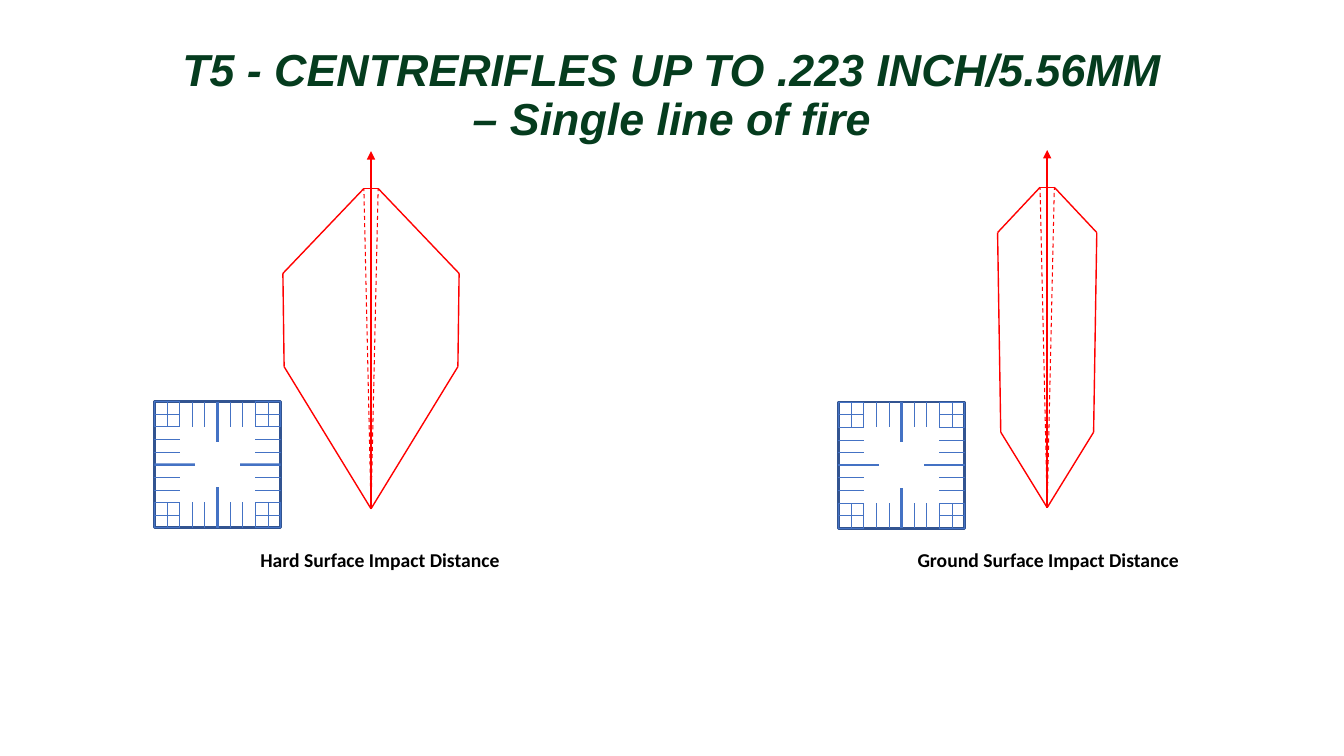
from pptx import Presentation
from pptx.dml.color import RGBColor
from pptx.enum import dml, shapes, text
from pptx.oxml import ns
from pptx.util import Cm, Pt
from lxml import etree

GREEN = RGBColor(0x05, 0x3C, 0x1E)
BLACK = RGBColor(0, 0, 0)
RED = RGBColor(0xFF, 0, 0)
BLUE = RGBColor(0x44, 0x72, 0xC4)
NAVY = RGBColor(0x32, 0x54, 0x91)

TITLE = ["T5 - CENTRERIFLES UP TO .223 INCH/5.56MM", "– Single line of fire"]

# All lengths in cm; profile lists (half width, y) from the foot up to the tip.
DIAGRAMS = [
    {"caption": "Ground Surface Impact Distance", "caption_left": 21.62,
     "grid": (21.13, 10.13), "axis": 26.39, "arrow_top": 3.78,
     "profile": [(0, 12.79), (1.17, 10.89), (1.25, 5.86), (0.18, 4.72)]},
    {"caption": "Hard Surface Impact Distance", "caption_left": 4.78,
     "grid": (3.89, 10.12), "axis": 9.35, "arrow_top": 3.81,
     "profile": [(0, 12.82), (2.19, 9.24), (2.22, 6.89), (0.18, 4.75)]},
]

GRID_SIDE, GRID_CELLS = 3.18, 10
SHORT_TICK, LONG_TICK = 0.64, 1.02
# Inward direction of the ticks on each side: top, left, bottom, right
INWARD = [(0, 1), (1, 0), (0, -1), (-1, 0)]


def add_line(group, start, end, color, width, dashed=False, arrow=False):
    line = group.shapes.add_connector(
        shapes.MSO_CONNECTOR.STRAIGHT, *map(Cm, start + end))
    line.line.color.rgb = color
    line.line.width = Pt(width)
    if dashed:
        line.line.dash_style = dml.MSO_LINE.DASH
    if arrow:
        etree.SubElement(line.line._get_or_add_ln(), ns.qn("a:tailEnd"),
                         type="triangle")
    etree.SubElement(line._element.spPr, ns.qn("a:effectLst"))
    return line


def add_grid(group, left, top):
    """Draw a square with ruler ticks pointing in from all four sides."""
    frame = group.shapes.add_shape(
        shapes.MSO_SHAPE.RECTANGLE, *map(Cm, (left, top, GRID_SIDE, GRID_SIDE)))
    frame.shadow.inherit = False
    frame.fill.background()
    frame.line.color.rgb = NAVY
    frame.line.width = Pt(2)

    for side, (dx, dy) in enumerate(INWARD):
        for i in range(GRID_CELLS + 1):
            along = GRID_SIDE * i / GRID_CELLS
            x = left + (along if dy else GRID_SIDE * (dx < 0))
            y = top + (along if dx else GRID_SIDE * (dy < 0))
            middle = i == GRID_CELLS // 2
            length = LONG_TICK if middle else SHORT_TICK
            tick = add_line(group, (x, y), (x + dx * length, y + dy * length),
                            BLUE, 1.75 if middle else 0.5)
            if middle:
                tick.begin_connect(frame, side)


def add_danger_area(group, axis, arrow_top, profile):
    """Draw the line of fire, its dashed spread and the mirrored outline."""
    foot_y = profile[0][1]
    tip_half, tip_y = profile[-1]
    add_line(group, (axis, foot_y), (axis, arrow_top), RED, 1.5, arrow=True)
    for mirror in (-1, 1):
        add_line(group, (axis, foot_y), (axis + mirror * tip_half, tip_y),
                 RED, 0.75, dashed=True)
        corners = [(axis + mirror * half, y) for half, y in profile]
        for start, end in zip(corners, corners[1:]):
            add_line(group, start, end, RED, 1)
    add_line(group, (axis + tip_half, tip_y), (axis - tip_half, tip_y), RED, 1)


def add_text(page, frame, lines, font_name, size, color, italic=None, spacing=None):
    box = page.shapes.add_textbox(*map(Cm, frame))
    box.text_frame.word_wrap = True
    box.text_frame.vertical_anchor = text.MSO_ANCHOR.TOP
    box.text_frame.text = "\n".join(lines)
    for para in box.text_frame.paragraphs:
        para.alignment = text.PP_ALIGN.CENTER
        para.line_spacing = spacing
        para.font.name = font_name
        para.font.size = Pt(size)
        para.font.bold = True
        para.font.italic = italic
        para.font.color.rgb = color


deck = Presentation()
deck.slide_width, deck.slide_height = Cm(33.87), Cm(19.05)
page = deck.slides.add_slide(deck.slide_layouts[6])

add_text(page, (0, 1.09, 33.87, 2.39), TITLE, "Arial", 32, GREEN,
         italic=True, spacing=0.9)
for diagram in DIAGRAMS:
    add_text(page, (diagram["caption_left"], 13.68, 9.6, 0.86),
             [diagram["caption"]], "Calibri", 14, BLACK)
    group = page.shapes.add_group_shape()
    add_grid(group, *diagram["grid"])
    add_danger_area(group, diagram["axis"], diagram["arrow_top"], diagram["profile"])

deck.save("out.pptx")
